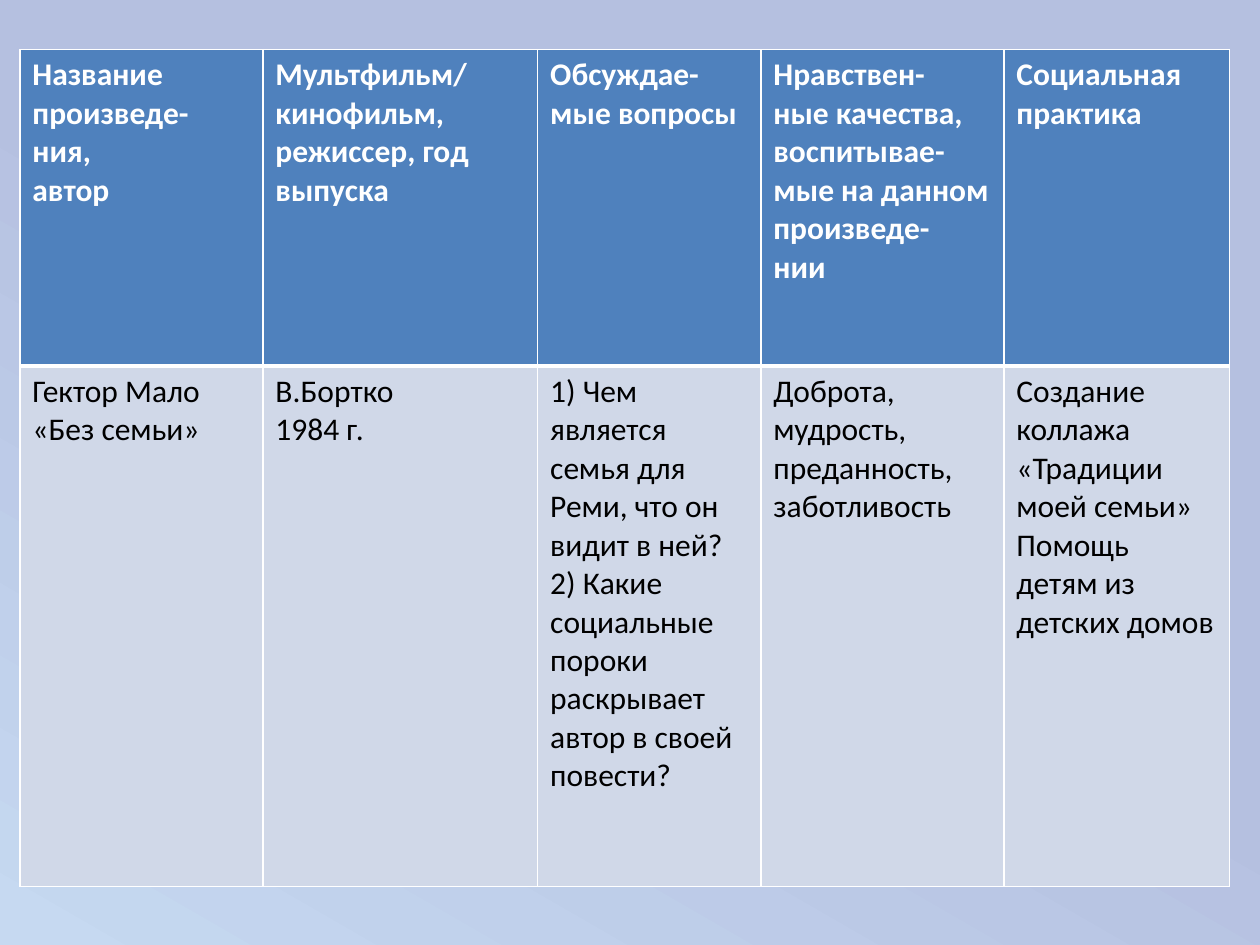
from lxml.etree import SubElement
from pptx import Presentation
from pptx.dml.color import RGBColor as Rgb
from pptx.oxml.ns import qn
from pptx.util import Cm, Pt

HUES = {
    "head": "4F81BD", "body": "D0D8E8", "rule": "FFFFFF",
    "light": "FFFFFF", "dark": "000000",
    "sky": "B5C0E0", "glow": "C6D9F1",
}
WIDTHS = [4.9, 5.54, 4.5, 4.9, 4.55]
HEIGHTS = [6.38, 10.49]
HEAD = [
    "Название произведе-\nния,\nавтор",
    "Мультфильм/\nкинофильм,\nрежиссер, год выпуска",
    "Обсуждае-\nмые вопросы",
    "Нравствен-\nные качества, воспитывае-\nмые на данном произведе-\nнии",
    "Социальная практика",
]
BODY = [
    "Гектор Мало «Без семьи»",
    "В.Бортко\n1984 г.",
    "1) Чем является семья для Реми, что он видит в ней?\n"
    "2) Какие социальные пороки раскрывает автор в своей повести?",
    "Доброта,\nмудрость,\nпреданность,\nзаботливость",
    "Создание коллажа «Традиции моей семьи»\nПомощь детям из детских домов",
]


def hue(name):
    """Return the named colour."""
    return Rgb.from_string(HUES[name])


def paint_back(slide):
    """Fill the background with a slanted gradient."""
    fill = slide.background.fill
    fill.gradient()
    fill.gradient_angle = 240
    for stop, pos, name in zip(fill.gradient_stops, (0.48, 1), ("sky", "glow")):
        stop.position = pos
        stop.color.rgb = hue(name)


def rule_cell(cell, top, base):
    """Draw the four borders of a cell, widths in points."""
    props = cell._tc.get_or_add_tcPr()
    for side, width in zip("LRTB", (1, 1, top, base)):
        line = SubElement(props, qn(f"a:ln{side}"), w=str(Pt(width)))
        fill = SubElement(line, qn("a:solidFill"))
        SubElement(fill, qn("a:srgbClr"), val=HUES["rule"])


def fill_cell(cell, text, back, ink, bold):
    """Set the fill and the text of a cell."""
    cell.fill.solid()
    cell.fill.fore_color.rgb = hue(back)
    cell.text_frame.text = text
    for para in cell.text_frame.paragraphs:
        for run in para.runs:
            font = run.font
            font.name, font.size, font.bold = "Calibri", Pt(18), bold
            font.color.rgb = hue(ink)


def add_grid(slide, left, top, width, height):
    """Place the table of works in the given box."""
    frame = slide.shapes.add_table(2, len(WIDTHS), left, top, width, height)
    table = frame.table
    for col, size in zip(table.columns, WIDTHS):
        col.width = int(width * size / sum(WIDTHS))
    for row, size in zip(table.rows, HEIGHTS):
        row.height = int(height * size / sum(HEIGHTS))
    looks = [
        (HEAD, (1, 3), ("head", "light", True)),
        (BODY, (3, 1), ("body", "dark", False)),
    ]
    for row, (texts, rules, look) in zip(table.rows, looks):
        for cell, text in zip(row.cells, texts):
            rule_cell(cell, *rules)
            fill_cell(cell, text, *look)


def main():
    """Build and save the slide."""
    deck = Presentation()
    deck.slide_width, deck.slide_height = Cm(25.4), Cm(19.05)
    slide = deck.slides.add_slide(deck.slide_layouts[6])
    paint_back(slide)
    add_grid(slide, Cm(0.4), Cm(1), Cm(sum(WIDTHS)), Cm(sum(HEIGHTS)))
    deck.save("out.pptx")


if __name__ == "__main__":
    main()
